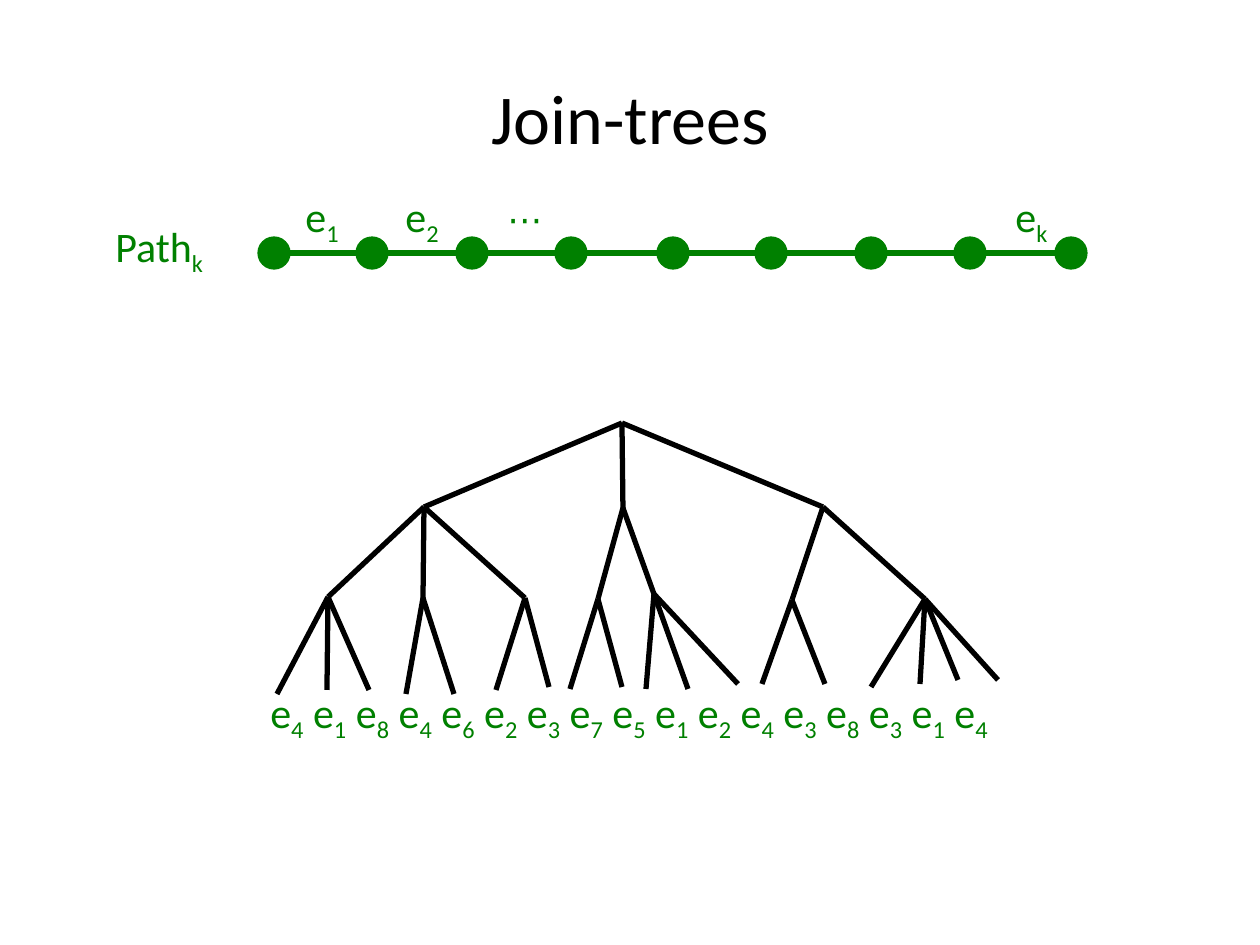
from dataclasses import dataclass

from lxml import etree
from pptx import Presentation
from pptx import util as u
from pptx.dml.color import RGBColor
from pptx.enum import shapes, text
from pptx.oxml import ns

PX_PER_INCH = 126
GREEN, BLACK = "008000", "000000"
FONT = "Calibri"


@dataclass
class Span:
    words: str
    size: int = 24
    lowered: bool = False


@dataclass
class Node:
    x: int
    y: int
    children: tuple["Node", ...] = ()


def px(length: int) -> u.Emu:
    return u.Emu(round(length * 914400 / PX_PER_INCH))


def colour(code: str) -> RGBColor:
    return RGBColor.from_string(code)


def write(box, spans: list[Span], *, hue: str = GREEN, align=text.PP_ALIGN.LEFT,
          anchor=text.MSO_ANCHOR.TOP, tabs: tuple[int, ...] = ()) -> None:
    """Fill a box with one paragraph of spans and optional tab stops."""
    frame = box.text_frame
    frame.word_wrap = True
    frame.vertical_anchor = anchor
    para = frame.paragraphs[0]
    para.alignment = align
    if tabs:
        stops = etree.SubElement(para._p.get_or_add_pPr(), ns.qn("a:tabLst"))
        for stop in tabs:
            etree.SubElement(stops, ns.qn("a:tab"), pos=str(px(stop)), algn="l")
    for span in spans:
        run = para.add_run()
        run.text = span.words
        run.font.size = u.Pt(span.size)
        run.font.name = FONT
        run.font.color.rgb = colour(hue)
        if span.lowered:
            run.font._element.set("baseline", "-25000")


def add_box(page, left: int, top: int, width: int, height: int):
    return page.shapes.add_textbox(px(left), px(top), px(width), px(height))


def add_line(page, x1: int, y1: int, x2: int, y2: int, hue: str) -> None:
    line = page.shapes.add_connector(
        shapes.MSO_CONNECTOR.STRAIGHT, px(x1), px(y1), px(x2), px(y2))
    line.line.color.rgb = colour(hue)
    line.line.width = u.Pt(3)
    etree.SubElement(line._element.spPr, ns.qn("a:effectLst"))


def add_vertex(page, x: int, y: int, radius: int) -> None:
    dot = page.shapes.add_shape(
        shapes.MSO_SHAPE.OVAL, px(x - radius), px(y - radius), px(2 * radius), px(2 * radius))
    dot.shadow.inherit = False
    dot.fill.solid()
    dot.fill.fore_color.rgb = colour(GREEN)
    dot.line.color.rgb = colour(GREEN)
    dot.line.width = u.Pt(0.75)


def add_tree(page, node: Node) -> None:
    for child in node.children:
        add_line(page, node.x, node.y, child.x, child.y, BLACK)
        add_tree(page, child)


def edge(index: str, before: str = "") -> list[Span]:
    return [Span(before + "e"), Span(index, lowered=True)]


PATH_Y, RADIUS = 253, 16
PATH_X = (274, 372, 472, 571, 673, 771, 871, 970, 1071)
LEAF_EDGES = "41846237512438314"

JOIN_TREE = Node(622, 423, (
    Node(424, 507, (
        Node(328, 597, (Node(277, 694), Node(327, 690), Node(369, 690))),
        Node(423, 598, (Node(406, 694), Node(454, 694))),
        Node(525, 598, (Node(496, 690), Node(549, 687))),
    )),
    Node(623, 508, (
        Node(598, 599, (Node(570, 689), Node(622, 687))),
        Node(654, 594, (Node(646, 689), Node(688, 689), Node(738, 684))),
    )),
    Node(823, 507, (
        Node(792, 600, (Node(762, 684), Node(825, 684))),
        Node(925, 599, (Node(871, 687), Node(920, 684), Node(958, 680), Node(998, 680))),
    )),
))


def main() -> None:
    deck = Presentation()
    deck.slide_width, deck.slide_height = px(1260), px(945)
    page = deck.slides.add_slide(deck.slide_layouts[5])

    # Title
    title = page.shapes.title
    title.left, title.top, title.width, title.height = px(63), px(38), px(1134), px(158)
    write(title, [Span("Join-trees", 40)], hue=BLACK,
          align=text.PP_ALIGN.CENTER, anchor=text.MSO_ANCHOR.MIDDLE)

    # Path with its vertices and edges
    write(add_box(page, 103, 214, 137, 89), [Span("Path"), Span("k", lowered=True)])
    for x in PATH_X:
        add_vertex(page, x, PATH_Y, RADIUS)
    for start, end in zip(PATH_X, PATH_X[1:]):
        add_line(page, start + RADIUS, PATH_Y, end - RADIUS, PATH_Y, GREEN)
    write(add_box(page, 293, 184, 882, 89),
          edge("1") + edge("2", "\t") + [Span("\t⋯", 20)] + edge("k", "\t"),
          tabs=(100, 202, 710))

    # Join-tree and the path edges at its leaves
    add_tree(page, JOIN_TREE)
    leaves = [span for place, index in enumerate(LEAF_EDGES)
              for span in edge(index, " " if place else "")]
    write(add_box(page, 258, 680, 791, 63), leaves)

    deck.save("out.pptx")


if __name__ == "__main__":
    main()
